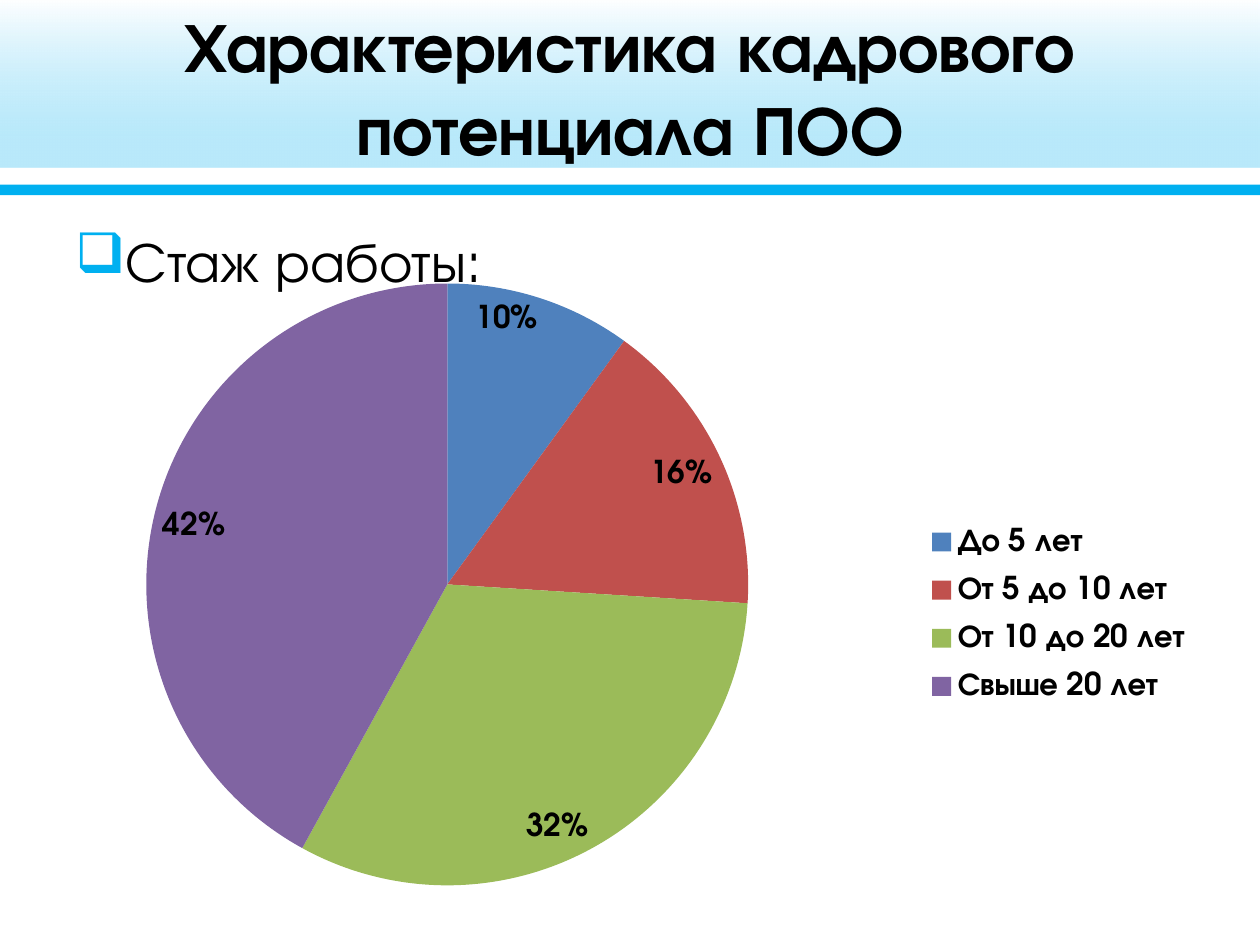
from lxml import etree
from pptx import Presentation
from pptx import chart as charts
from pptx.chart import data
from pptx.dml.color import RGBColor
from pptx.enum import chart as chart_enum, shapes, text
from pptx.oxml import ns, parse_xml
from pptx.util import Pt

BLACK = RGBColor(0, 0, 0)
WHITE = RGBColor(255, 255, 255)
SKY = RGBColor(0x00, 0xB0, 0xF0)
SLICE_COLORS = [RGBColor(0x4F, 0x81, 0xBD), RGBColor(0xC0, 0x50, 0x4D),
                RGBColor(0x9B, 0xBB, 0x59), RGBColor(0x80, 0x64, 0xA2)]
EXPERIENCE = {"До 5 лет": 0.10, "От 5 до 10 лет": 0.16,
              "От 10 до 20 лет": 0.32, "Свыше 20 лет": 0.42}


class PageBuilder:
    font = "TeX Gyre Adventor"

    def __init__(self, page):
        self.page = page

    def style(self, font, size, bold=False):
        font.name = self.font
        font.size = Pt(size)
        font.bold = bold
        font.color.rgb = BLACK

    def band(self, left, top, width, height, color=None, stops=()):
        """Rectangle with a solid color, or stops of (position, color, opacity) in percent."""
        shape = self.page.shapes.add_shape(
            shapes.MSO_SHAPE.RECTANGLE, Pt(left), Pt(top), Pt(width), Pt(height))
        shape.shadow.inherit = False
        shape.line.fill.background()
        if color is not None:
            shape.fill.solid()
            shape.fill.fore_color.rgb = color
            return
        shape.fill.gradient()
        shape.fill.gradient_angle = 270
        stop_list = shape.fill._fill._gradFill.find(ns.qn("a:gsLst"))
        for old in list(stop_list):
            stop_list.remove(old)
        for position, rgb, opacity in stops:
            stop = etree.SubElement(stop_list, ns.qn("a:gs"), pos=str(position * 1000))
            tint = etree.SubElement(stop, ns.qn("a:srgbClr"), val=str(rgb))
            etree.SubElement(tint, ns.qn("a:alpha"), val=str(opacity * 1000))

    def text(self, left, top, width, height, words, size, bold=False,
             align=text.PP_ALIGN.LEFT, anchor=text.MSO_ANCHOR.TOP, bullet=None):
        box = self.page.shapes.add_textbox(Pt(left), Pt(top), Pt(width), Pt(height))
        frame = box.text_frame
        frame.word_wrap = True
        frame.vertical_anchor = anchor
        para = frame.paragraphs[0]
        para.text = words
        para.alignment = align
        if bullet:
            props = para._p.get_or_add_pPr()
            props.set("marL", str(Pt(27)))
            props.set("indent", str(-Pt(27)))
            color = etree.SubElement(props, ns.qn("a:buClr"))
            etree.SubElement(color, ns.qn("a:srgbClr"), val=str(SKY))
            etree.SubElement(props, ns.qn("a:buChar"), char=bullet)
        self.style(para.font, size, bold)

    @staticmethod
    def layout(x, y, width, height, inner=False):
        target = '<c:layoutTarget val="inner"/>' if inner else ""
        return parse_xml(
            f'<c:layout {ns.nsdecls("c")}><c:manualLayout>{target}'
            '<c:xMode val="edge"/><c:yMode val="edge"/>'
            f'<c:x val="{x}"/><c:y val="{y}"/><c:w val="{width}"/><c:h val="{height}"/>'
            '</c:manualLayout></c:layout>')

    def pie(self, left, top, width, height, shares, colors):
        chart_data = data.CategoryChartData(number_format="0%")
        chart_data.categories = list(shares)
        chart_data.add_series("Series 1", list(shares.values()))
        chart = self.page.shapes.add_chart(
            chart_enum.XL_CHART_TYPE.PIE, Pt(left), Pt(top), Pt(width), Pt(height),
            chart_data).chart
        chart.has_title = False
        chart.font.name = "Calibri"
        chart.font.size = Pt(10)
        chart.font.color.rgb = BLACK

        # Slices and their labels
        plot = chart.plots[0]
        plot.vary_by_categories = True
        for index, color in enumerate(colors):
            fill = plot.series[0].points[index].format.fill
            fill.solid()
            fill.fore_color.rgb = color
        labels = plot.series[0].data_labels
        labels.show_value = True
        labels.number_format = "0%"
        labels.number_format_is_linked = False
        labels.position = chart_enum.XL_LABEL_POSITION.INSIDE_END
        self.style(labels.font, 18, bold=True)

        # Legend
        chart.has_legend = True
        legend = chart.legend
        legend.position = chart_enum.XL_LEGEND_POSITION.RIGHT
        legend.include_in_layout = False
        self.style(legend.font, 18, bold=True)

        # Places of the pie and the legend
        area = chart._chartSpace.chart.plotArea
        for old in area.findall(ns.qn("c:layout")):
            area.remove(old)
        area.insert(0, self.layout(0.07, 0, 0.57, 0.91, inner=True))
        legend_xml = legend._element
        for old in legend_xml.findall(ns.qn("c:layout")):
            legend_xml.remove(old)
        legend_xml.find(ns.qn("c:legendPos")).addnext(self.layout(0.72, 0.34, 0.24, 0.32))


def main():
    deck = Presentation()
    deck.slide_width, deck.slide_height = Pt(720), Pt(540)
    builder = PageBuilder(deck.slides.add_slide(deck.slide_layouts[6]))

    # Header
    builder.band(-1.5, -1, 720, 96, stops=[(0, WHITE, 80), (100, WHITE, 23)])
    builder.band(0, 105.5, 728.5, 6, color=SKY)
    builder.band(0, 0, 728.5, 96, stops=[(0, WHITE, 46), (84, SKY, 27)])
    builder.text(36, 4.5, 648, 90, "Характеристика кадрового потенциала ПОО", 39.6,
                 bold=True, align=text.PP_ALIGN.CENTER, anchor=text.MSO_ANCHOR.MIDDLE)

    # Work experience
    builder.text(36, 126, 648, 356.5, "Стаж работы:", 32, bullet="❑")
    builder.pie(0, 162, 720, 378, EXPERIENCE, SLICE_COLORS)

    deck.save("out.pptx")


if __name__ == "__main__":
    main()
